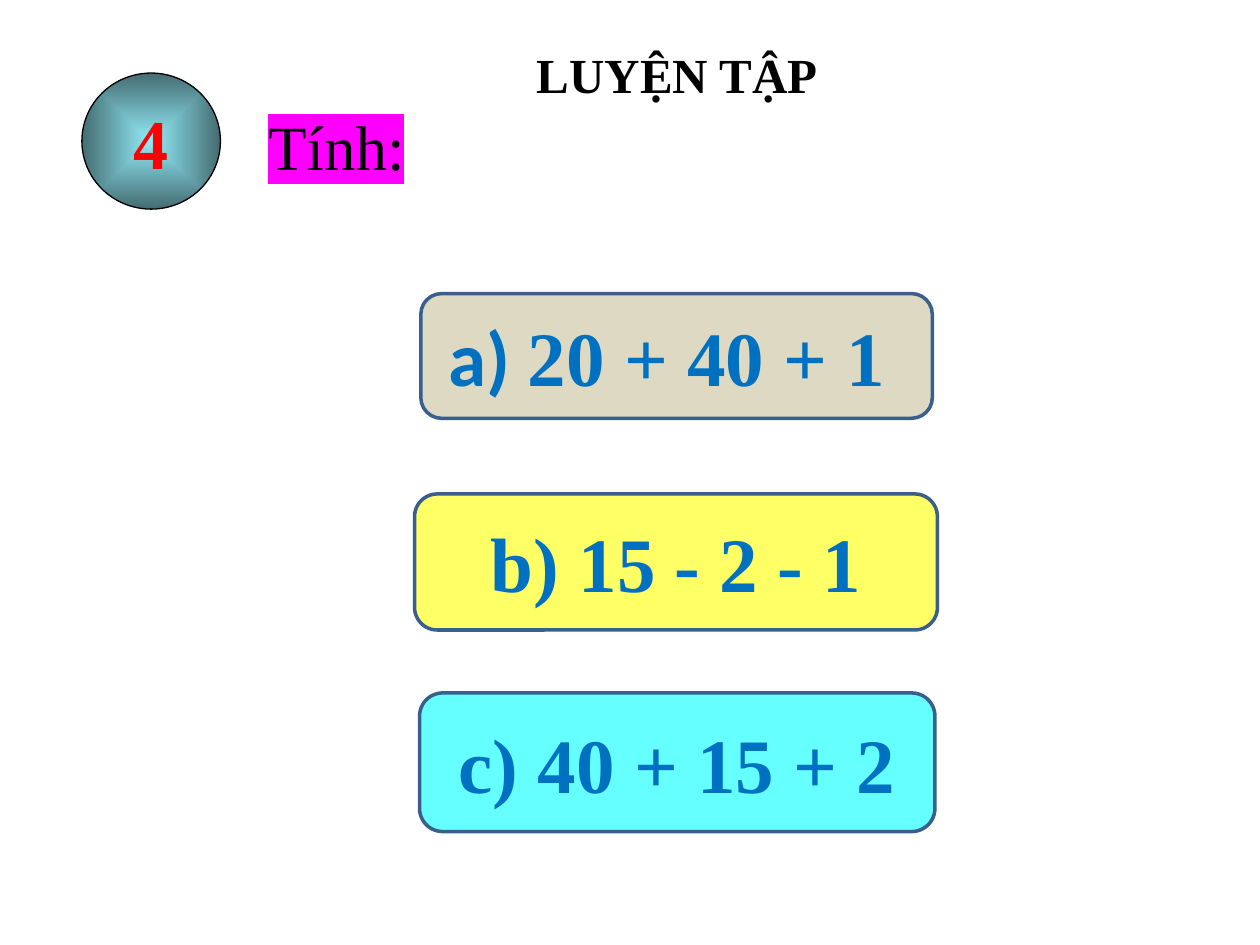
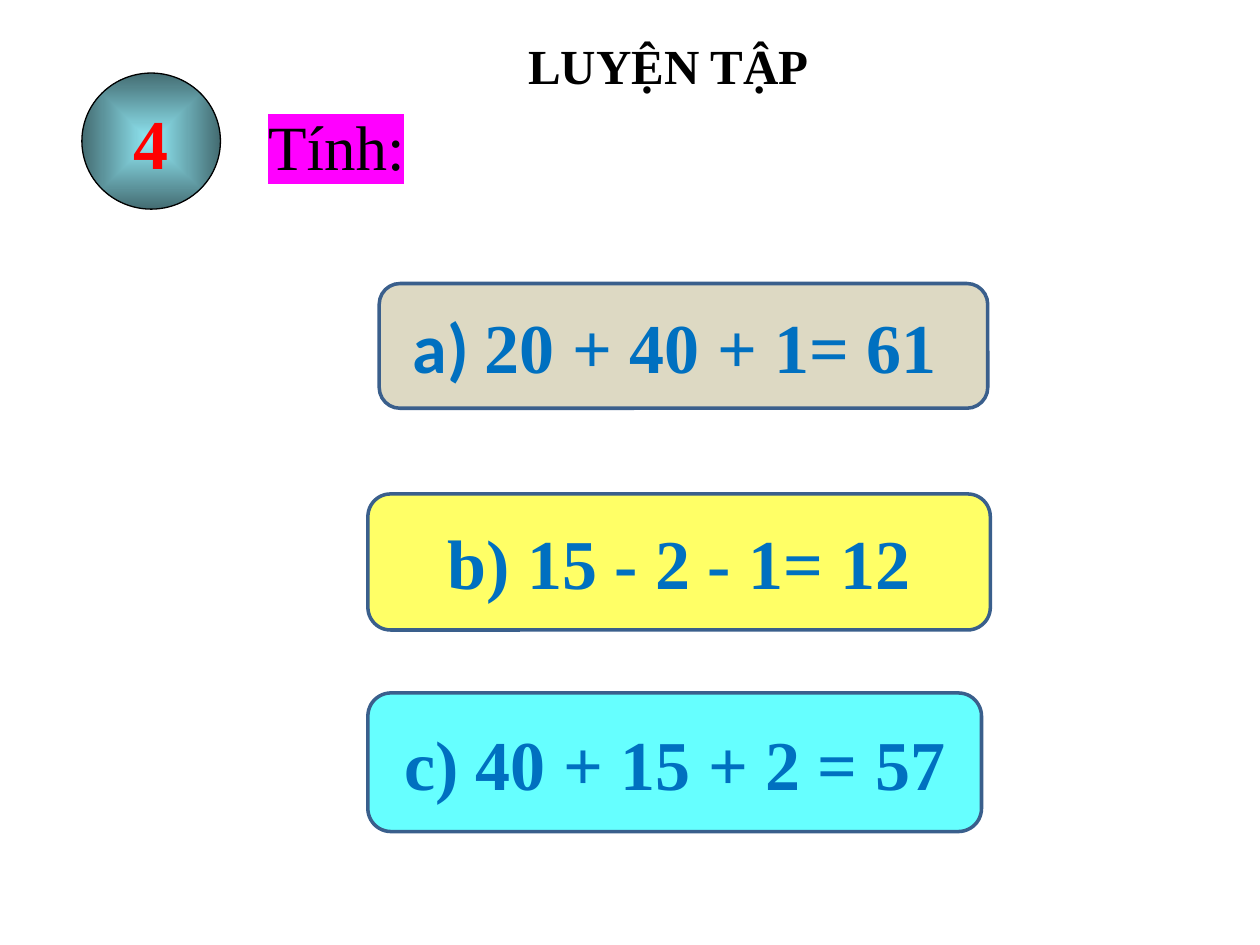
from dataclasses import dataclass

from pptx import Presentation
from pptx.dml.color import RGBColor
from pptx.enum.shapes import MSO_SHAPE as Shape
from pptx.enum.text import MSO_ANCHOR as Anchor, MSO_AUTO_SIZE as AutoSize, PP_ALIGN as Align
from pptx.oxml import parse_xml
from pptx.oxml.ns import nsdecls, qn
from pptx.util import Inches, Pt

COLORS = {
    "text": "000000", "number": "FF0000", "sum": "0070C0", "highlight": "FF00FF",
    "badge_center": "92EAF6", "badge_edge": "446C72", "card_line": "3A5F8C",
    "tan": "DDD9C3", "yellow": "FFFF66", "cyan": "66FFFF",
}
SERIF, SANS = "Times New Roman", "Calibri"


@dataclass(frozen=True)
class Card:
    label: str
    sum: str
    left: float
    top: float
    width: float
    height: float
    fill: str
    label_font: str = SERIF


@dataclass(frozen=True)
class Exercise:
    title_left: float
    title_top: float
    sum_size: int
    cards: tuple[Card, ...]


EXERCISES = (
    Exercise(0.71, 0.3, 44, (
        Card("a) ", "20 + 40 + 1 ", 3.34, 2.33, 4.06, 0.99, "tan", SANS),
        Card("b) ", "15 - 2 - 1", 3.29, 3.92, 4.15, 1.08, "yellow"),
        Card("c) ", "40 + 15 + 2", 3.33, 5.5, 4.09, 1.1, "cyan"),
    )),
    Exercise(0.64, 0.23, 40, (
        Card("a) ", "20 + 40 + 1= 61 ", 3.01, 2.25, 4.83, 0.99, "tan", SANS),
        Card("b) ", "15 - 2 - 1= 12", 2.92, 3.92, 4.94, 1.08, "yellow"),
        Card("c) ", "40 + 15 + 2 = 57", 2.92, 5.5, 4.87, 1.1, "cyan"),
    )),
)


def rgb(name: str) -> RGBColor:
    return RGBColor.from_string(COLORS[name])


def format_run(r, size: int, color: str, font: str = SERIF, bold: bool = True) -> None:
    r.font.size, r.font.name, r.font.bold = Pt(size), font, bold
    r.font.color.rgb = rgb(color)


def add_title(s, left: float, top: float) -> None:
    sp = s.shapes.title
    sp.left, sp.top, sp.width, sp.height = map(Inches, (left, top, 9.33, 0.57))
    tf = sp.text_frame
    tf.text = "LUYỆN TẬP"
    tf.auto_size, tf.vertical_anchor = AutoSize.NONE, Anchor.TOP
    p = tf.paragraphs[0]
    p.alignment = Align.CENTER
    format_run(p.runs[0], 28, "text")


def add_panel(s, kind, left: float, top: float, width: float, height: float,
              line: str, line_width: float, text: str):
    """Add an outlined shape with centred text."""
    sp = s.shapes.add_shape(kind, *map(Inches, (left, top, width, height)))
    sp.shadow.inherit = False
    sp.line.color.rgb, sp.line.width = rgb(line), Pt(line_width)
    tf = sp.text_frame
    tf.text, tf.vertical_anchor = text, Anchor.MIDDLE
    tf.paragraphs[0].alignment = Align.CENTER
    return sp


def add_badge(s, number: str) -> None:
    sp = add_panel(s, Shape.OVAL, 0.65, 0.58, 1.1, 1.08, "text", 0.75, number)
    sp.text_frame.word_wrap = False
    format_run(sp.text_frame.paragraphs[0].runs[0], 40, "number")
    # Gradient that follows the shape from its centre
    sp.fill.gradient()
    spPr = sp._element.spPr
    spPr.replace(spPr.find(qn("a:gradFill")), parse_xml(
        f'<a:gradFill {nsdecls("a")} rotWithShape="1"><a:gsLst>'
        f'<a:gs pos="0"><a:srgbClr val="{COLORS["badge_center"]}"/></a:gs>'
        f'<a:gs pos="100000"><a:srgbClr val="{COLORS["badge_edge"]}"/></a:gs></a:gsLst>'
        '<a:path path="shape"><a:fillToRect l="50000" t="50000" r="50000" b="50000"/>'
        '</a:path></a:gradFill>'))


def add_card(s, card: Card, size: int) -> None:
    sp = add_panel(s, Shape.FLOWCHART_ALTERNATE_PROCESS, card.left, card.top,
                   card.width, card.height, "card_line", 2, card.label)
    sp.fill.solid()
    sp.fill.fore_color.rgb = rgb(card.fill)
    p = sp.text_frame.paragraphs[0]
    p.add_run().text = card.sum
    for r, font in zip(p.runs, (card.label_font, SERIF)):
        format_run(r, size, "sum", font)


def add_instruction(s, text: str) -> None:
    tf = s.shapes.add_textbox(*map(Inches, (2.03, 0.8, 1.8, 0.71))).text_frame
    tf.text, tf.word_wrap = text, True
    r = tf.paragraphs[0].runs[0]
    format_run(r, 36, "text", bold=False)
    # The highlight must follow the text fill
    r._r.rPr.find(qn("a:solidFill")).addnext(parse_xml(
        f'<a:highlight {nsdecls("a")}><a:srgbClr val="{COLORS["highlight"]}"/></a:highlight>'))


def main() -> None:
    prs = Presentation()
    prs.slide_width, prs.slide_height = Inches(10), Inches(7.5)
    title_only = prs.slide_layouts[5]
    for exercise in EXERCISES:
        s = prs.slides.add_slide(title_only)
        add_title(s, exercise.title_left, exercise.title_top)
        add_badge(s, "4")
        for card in exercise.cards:
            add_card(s, card, exercise.sum_size)
        add_instruction(s, "Tính:")
    prs.save("out.pptx")


if __name__ == "__main__":
    main()
